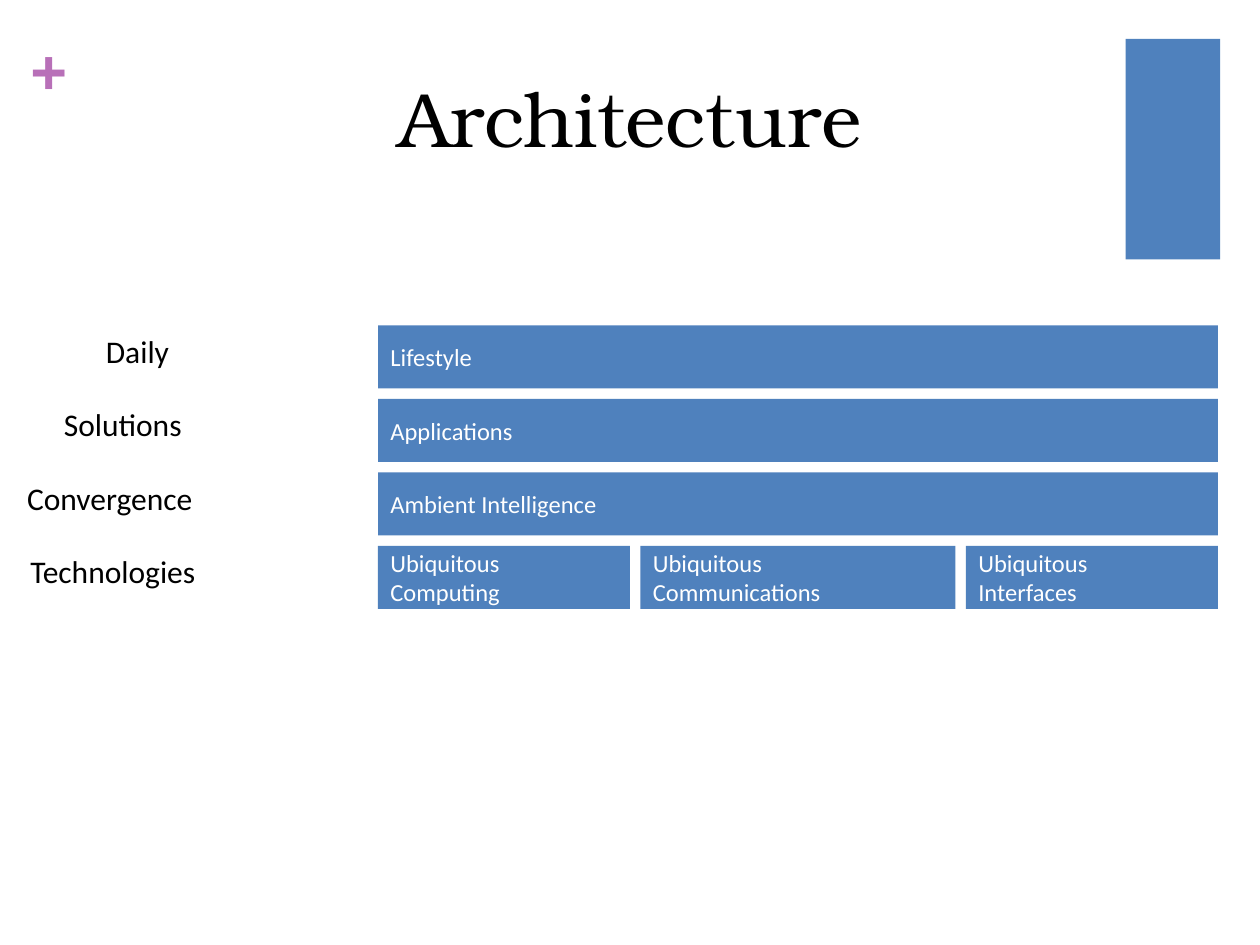
import pptx
import pptx.util
import pptx.dml.color
import pptx.enum.shapes
import pptx.enum.text

WIDE, HIGH = 10, 7.5
COLS, ROWS = 120, 90
BLUE, PINK, BLACK, WHITE = "4F81BD", "B870B8", "000000", "FFFFFF"
ALIGN = pptx.enum.text.PP_ALIGN
ANCHOR = pptx.enum.text.MSO_ANCHOR


def tint(code):
    return pptx.dml.color.RGBColor.from_string(code)


def place(col, row, cols, rows):
    wide, high = WIDE / COLS, HIGH / ROWS
    sizes = (col * wide, row * high, cols * wide, rows * high)
    return [pptx.util.Inches(size) for size in sizes]


def write(shape, text, size=14, font="Calibri", color=BLACK, bold=False,
          align=ALIGN.LEFT, anchor=ANCHOR.TOP, inset=None):
    frame = shape.text_frame
    frame.word_wrap = True
    frame.vertical_anchor = anchor
    if inset is not None:
        frame.margin_left = frame.margin_right = inset
        frame.margin_top = frame.margin_bottom = inset
    frame.text = text
    for para in frame.paragraphs:
        para.alignment = align
        for run in para.runs:
            run.font.size = pptx.util.Pt(size)
            run.font.name = font
            run.font.bold = bold
            run.font.color.rgb = tint(color)


def block(slide, box):
    kind = pptx.enum.shapes.MSO_SHAPE.RECTANGLE
    shape = slide.shapes.add_shape(kind, *place(*box))
    shape.shadow.inherit = False
    shape.fill.solid()
    shape.fill.fore_color.rgb = tint(BLUE)
    shape.line.fill.background()
    return shape


def header(slide, box):
    col, row, cols, rows = box
    block(slide, (107.2, 3.7, 9, 21))
    plus = slide.shapes.add_textbox(*place(2.9, 3, 3.4, 7.3))
    write(plus, "+", size=36, font="Arial", color=PINK, bold=True, inset=0)
    title = slide.shapes.title
    title.left, title.top, title.width, title.height = place(*box)
    write(title, "Architecture", size=44, font="TeX Gyre Bonum",
          align=ALIGN.CENTER, anchor=ANCHOR.MIDDLE)


def layer(slide, box, names, shares, gap=1):
    col, row, cols, rows = box
    unit = (cols - gap * (len(names) - 1)) / sum(shares)
    for name, share in zip(names, shares):
        shape = block(slide, (col, row, share * unit, rows))
        write(shape, name, color=WHITE, anchor=ANCHOR.MIDDLE)
        col += share * unit + gap


def stack(slide, box, gap=1):
    col, row, cols, rows = box
    layers = [
        ("Daily", 8.9, 10.4, ["Lifestyle"], [1]),
        ("Solutions", 4.9, 16.4, ["Applications"], [1]),
        ("Convergence", 1.4, 23.3, ["Ambient Intelligence"], [1]),
        ("Technologies", 1.7, 23.2,
         ["Ubiquitous\nComputing", "Ubiquitous\nCommunications",
          "Ubiquitous\nInterfaces"], [4, 5, 4]),
    ]
    tall = (rows - gap * (len(layers) - 1)) / len(layers)
    for label, left, span, names, shares in layers:
        layer(slide, (col, row, cols, tall), names, shares, gap)
        note = slide.shapes.add_textbox(*place(left, row, span, 5.3))
        write(note, label, size=18)
        row += tall + gap


def main():
    deck = pptx.Presentation()
    deck.slide_width = pptx.util.Inches(WIDE)
    deck.slide_height = pptx.util.Inches(HIGH)
    slide = deck.slides.add_slide(deck.slide_layouts[5])
    header(slide, (6, 3.6, 108, 15))
    stack(slide, (36, 31, 80, 27))
    deck.save("out.pptx")


if __name__ == "__main__":
    main()
